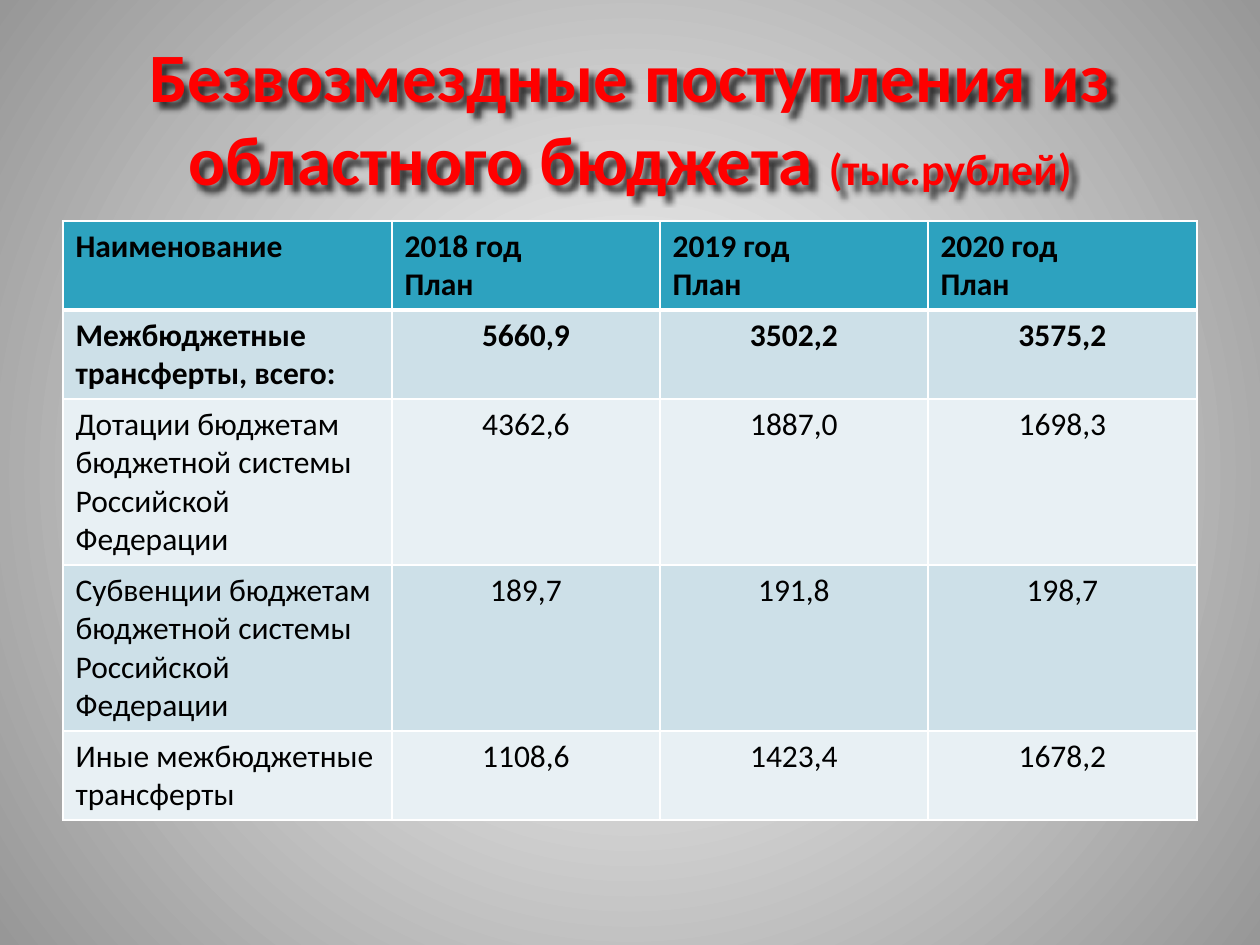
from typing import NamedTuple

from lxml.etree import SubElement
from pptx import Presentation
from pptx.dml.color import RGBColor
from pptx.enum.text import MSO_ANCHOR, PP_ALIGN
from pptx.oxml.ns import qn
from pptx.util import Pt

SCALE = 914400 / 126
FONT = "Calibri"
COLORS = {
    "title": "FF0000",
    "text": "000000",
    "header": "2DA2BF",
    "band_dark": "CDE0E8",
    "band_light": "E8F0F4",
    "border": "FFFFFF",
    "center": "FFFFFF",
    "edge": "979797",
    "shadow": "000000",
}


class BudgetRow(NamedTuple):
    name: str
    values: tuple[str, ...]
    height: int
    fill: str
    bold: bool = False
    align: PP_ALIGN = PP_ALIGN.CENTER
    bottom: int = 1


YEARS = tuple(f"{year} год\nПлан" for year in (2018, 2019, 2020))
SYSTEM = "бюджетам бюджетной системы Российской Федерации"
ROWS = [
    BudgetRow("Наименование", YEARS, 89, "header", True, PP_ALIGN.LEFT, 3),
    BudgetRow("Межбюджетные трансферты, всего:",
              ("5660,9", "3502,2", "3575,2"), 89, "band_dark", True),
    BudgetRow(f"Дотации {SYSTEM}", ("4362,6", "1887,0", "1698,3"), 166, "band_light"),
    BudgetRow(f"Субвенции {SYSTEM}", ("189,7", "191,8", "198,7"), 166, "band_dark"),
    BudgetRow("Иные межбюджетные трансферты",
              ("1108,6", "1423,4", "1678,2"), 89, "band_light"),
]
COLUMNS = (329, 268, 268, 269)


def px(n: int) -> int:
    return round(n * SCALE)


def rgb(name: str) -> RGBColor:
    return RGBColor.from_string(COLORS[name])


def add_run(p, text: str, *, size: float, color: str = "text", bold: bool = False) -> None:
    r = p.add_run()
    r.text = text
    r.font.name = FONT
    r.font.size = Pt(size)
    r.font.bold = bold
    r.font.color.rgb = rgb(color)


def add_background(s) -> None:
    fill = s.background.fill
    fill.gradient()
    for stop, name in zip(fill.gradient_stops, ("center", "edge")):
        stop.color.rgb = rgb(name)
    grad = next(s._element.iter(qn("a:gradFill")))
    grad.remove(grad.find(qn("a:lin")))
    circle = SubElement(grad, qn("a:path"), path="circle")
    SubElement(circle, qn("a:fillToRect"), dict.fromkeys("ltrb", "50000"))


def add_title(s) -> None:
    sp = s.shapes.add_textbox(px(63), px(38), px(1134), px(157))
    tf = sp.text_frame
    tf.word_wrap = True
    tf.vertical_anchor = MSO_ANCHOR.MIDDLE
    p = tf.paragraphs[0]
    p.alignment = PP_ALIGN.CENTER
    add_run(p, "Безвозмездные поступления из областного бюджета ",
            size=39.6, color="title", bold=True)
    add_run(p, "(тыс.рублей)", size=25.2, color="title", bold=True)
    effects = SubElement(sp._element.spPr, qn("a:effectLst"))
    shadow = SubElement(effects, qn("a:outerShdw"), blurRad="38100", dist="50800",
                        dir="2700000", algn="tl", rotWithShape="0")
    tone = SubElement(shadow, qn("a:srgbClr"), val=COLORS["shadow"])
    SubElement(tone, qn("a:alpha"), val="75000")


def set_borders(cell, top: int, bottom: int) -> None:
    tc_pr = cell._tc.get_or_add_tcPr()
    widths = {"a:lnL": 1, "a:lnR": 1, "a:lnT": top, "a:lnB": bottom}
    for i, (tag, width) in enumerate(widths.items()):
        ln = SubElement(tc_pr, qn(tag), w=str(Pt(width)))
        tc_pr.insert(i, ln)
        fill = SubElement(ln, qn("a:solidFill"))
        SubElement(fill, qn("a:srgbClr"), val=COLORS["border"])


def fill_cell(cell, text: str, row: BudgetRow, align: PP_ALIGN, top: int) -> None:
    cell.fill.solid()
    cell.fill.fore_color.rgb = rgb(row.fill)
    tf = cell.text_frame
    for i, line in enumerate(text.split("\n")):
        p = tf.add_paragraph() if i else tf.paragraphs[0]
        p.alignment = align
        add_run(p, line, size=18, bold=row.bold)
    set_borders(cell, top, row.bottom)


def add_budget_table(s) -> None:
    height = sum(row.height for row in ROWS)
    table = s.shapes.add_table(len(ROWS), len(COLUMNS), px(63), px(221),
                               px(sum(COLUMNS)), px(height)).table
    table.horz_banding = False
    for column, width in zip(table.columns, COLUMNS):
        column.width = px(width)
    top = 1
    for i, row in enumerate(ROWS):
        table.rows[i].height = px(row.height)
        for j, text in enumerate((row.name, *row.values)):
            align = row.align if j else PP_ALIGN.LEFT
            fill_cell(table.cell(i, j), text, row, align, top)
        top = row.bottom


def main() -> None:
    """Build the slide with the regional budget transfers table."""
    prs = Presentation()
    prs.slide_width, prs.slide_height = px(1260), px(945)
    s = prs.slides.add_slide(prs.slide_layouts[6])
    add_background(s)
    add_title(s)
    add_budget_table(s)
    prs.save("out.pptx")


if __name__ == "__main__":
    main()
